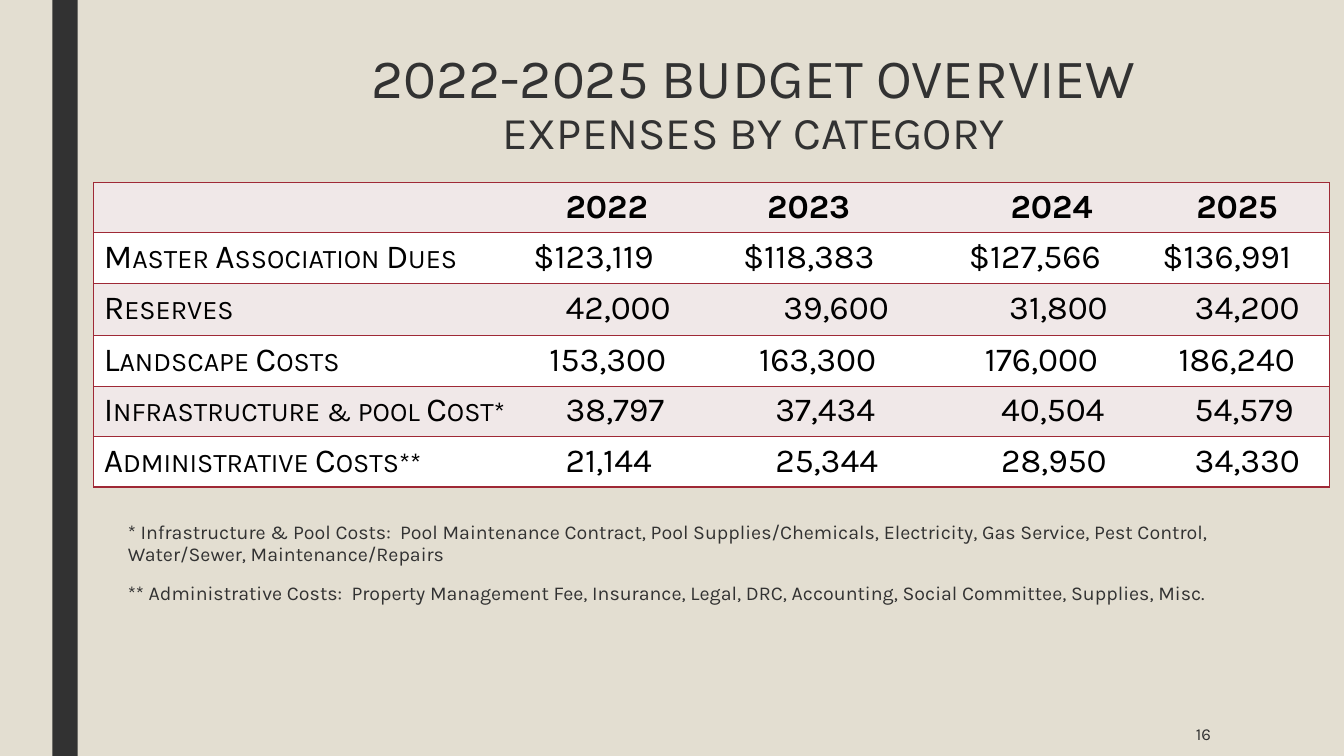
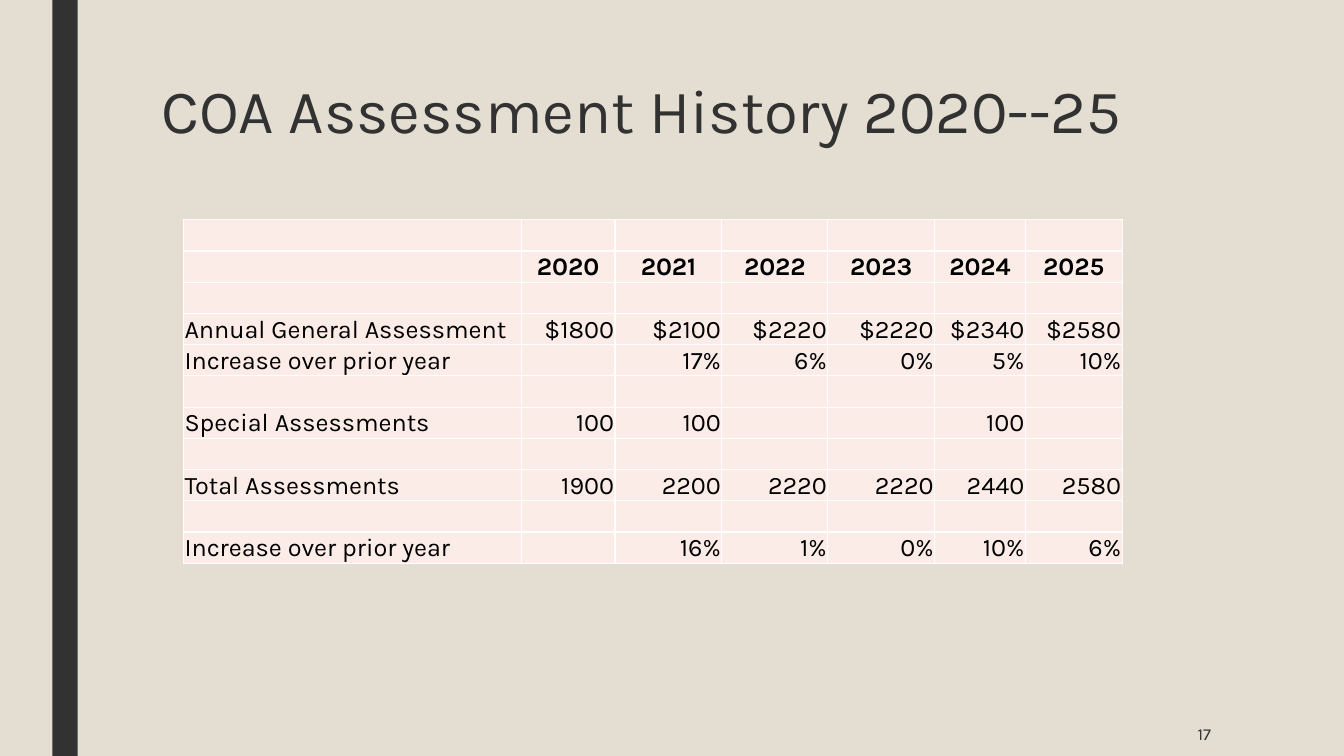
import pptx
import pptx.util
import pptx.dml.color
import pptx.enum.shapes
import pptx.enum.text
import pptx.oxml
import pptx.oxml.ns

Inches, Pt = pptx.util.Inches, pptx.util.Pt
ALIGN = pptx.enum.text.PP_ALIGN
ANCHOR = pptx.enum.text.MSO_ANCHOR

FONT = "Karla"
COLORS = {
    "background": "E3DED1", "ink": "323232", "black": "000000", "white": "FFFFFF",
    "budget_line": "9F2936", "budget_tint": "F0E8E8", "history_fill": "FCECE7",
}
NO_GRID_STYLE = "{2D5ABB26-0587-4C30-8999-92F81FD0307C}"

# Content: expenses by category
BUDGET_TITLE = [("2022-2025 BUDGET OVERVIEW", 39.6), ("EXPENSES BY CATEGORY", 32.4)]
BUDGET_ROWS = [
    ("", "2022", "2023", "2024", "2025"),
    ("Master Association Dues", "$123,119", "$118,383", "$127,566", "$136,991"),
    ("Reserves", "42,000", "39,600", "31,800", "34,200"),
    ("Landscape Costs", "153,300", "163,300", "176,000", "186,240"),
    ("Infrastructure & pool Cost*", "38,797", "37,434", "40,504", "54,579"),
    ("Administrative Costs**", "21,144", "25,344", "28,950", "34,330"),
]
BUDGET_COLUMNS = [4.26, 2.08, 2.24, 1.84, 1.84]
BUDGET_HEIGHTS = [0.5, 0.5, 0.52, 0.5, 0.5, 0.5]
INDENT_STEP = 0.08
YEAR_STEPS = {"2022": 4, "2023": 3}          # the later years are centred
EXTRA_STEPS = {"39,600": 1, "31,800": 1}
FOOTNOTES = [
    "* Infrastructure & Pool Costs:  Pool Maintenance Contract, Pool Supplies/Chemicals, "
    "Electricity, Gas Service, Pest Control, Water/Sewer, Maintenance/Repairs",
    "** Administrative Costs:  Property Management Fee, Insurance, Legal, DRC, Accounting, "
    "Social Committee, Supplies, Misc.",
]

# Content: assessment history
HISTORY_TITLE = [("COA Assessment History 2020--25", 44)]
BLANK = ("",) * 7
HISTORY_ROWS = [
    BLANK,
    ("", "2020", "2021", "2022", "2023", "2024", "2025"),
    BLANK,
    ("Annual General Assessment", "$1800", "$2100", "$2220", "$2220", "$2340", "$2580"),
    ("Increase over prior year", "", "17%", "6%", "0%", "5%", "10%"),
    BLANK,
    ("Special Assessments", "100", "100", "", "", "100", ""),
    BLANK,
    ("Total Assessments", "1900", "2200", "2220", "2220", "2440", "2580"),
    BLANK,
    ("Increase over prior year", "", "16%", "1%", "0%", "10%", "6%"),
]
HISTORY_COLUMNS = [3.35, 0.93, 1.06, 1.05, 1.06, 0.9, 0.96]
HISTORY_HEIGHTS = [0.31] * len(HISTORY_ROWS)
HISTORY_YEAR_ROW = 1


# Shared helpers
def rgb(name):
    return pptx.dml.color.RGBColor.from_string(COLORS[name])


def add_run(paragraph, text, size, color="ink", bold=False):
    run = paragraph.add_run()
    run.text = text
    run.font.name, run.font.size, run.font.bold = FONT, Pt(size), bold
    run.font.color.rgb = rgb(color)
    return run


def add_text_box(slide, box):
    frame = slide.shapes.add_textbox(*map(Inches, box)).text_frame
    frame.word_wrap = True
    return frame


def start_slide(prs, title_lines, title_box, title_align, number):
    """Add a slide with background, side band, title and page number."""
    slide = prs.slides.add_slide(prs.slide_layouts[5])
    band = slide.shapes.add_shape(
        pptx.enum.shapes.MSO_SHAPE.RECTANGLE, Inches(0.52), 0, Inches(0.25), prs.slide_height)
    band.shadow.inherit = False
    band.fill.solid()
    band.fill.fore_color.rgb = rgb("ink")
    band.line.fill.background()

    title = slide.shapes.title
    title.left, title.top, title.width, title.height = map(Inches, title_box)
    frame = title.text_frame
    frame.word_wrap = True
    frame.auto_size = pptx.enum.text.MSO_AUTO_SIZE.NONE
    frame.vertical_anchor = ANCHOR.TOP
    paragraph = frame.paragraphs[0]
    paragraph.alignment, paragraph.line_spacing = title_align, 0.89
    for i, (text, size) in enumerate(title_lines):
        if i:
            paragraph.add_line_break()
        add_run(paragraph, text, size)

    frame = add_text_box(slide, (10.36, 7.06, 1.75, 0.44))
    frame.vertical_anchor = ANCHOR.MIDDLE
    frame.paragraphs[0].alignment = ALIGN.RIGHT
    add_run(frame.paragraphs[0], str(number), 12)
    return slide


def add_grid(slide, left, top, columns, heights):
    """Add an unstyled table with the given column widths and row heights."""
    table = slide.shapes.add_table(
        len(heights), len(columns), Inches(left), Inches(top),
        Inches(sum(columns)), Inches(sum(heights))).table
    table.first_row = table.horz_banding = False
    table._tbl.tblPr.find(pptx.oxml.ns.qn("a:tableStyleId")).text = NO_GRID_STYLE
    for column, width in zip(table.columns, columns):
        column.width = Inches(width)
    for row, height in zip(table.rows, heights):
        row.height = Inches(height)
    return table


def style_cell(cell, fill, line, sides):
    """Draw 1 pt borders on the sides (a subset of LRTB, in that order) and fill the cell."""
    properties = cell._tc.get_or_add_tcPr()
    for side in sides:
        properties.append(pptx.oxml.parse_xml(
            f'<a:ln{side} {pptx.oxml.ns.nsdecls("a")} w="{Pt(1)}"><a:solidFill>'
            f'<a:srgbClr val="{COLORS[line]}"/></a:solidFill></a:ln{side}>'))
    cell.fill.solid()
    cell.fill.fore_color.rgb = rgb(fill)


# Slide parts
def fill_budget_cell(cell, text, r, c, last):
    paragraph = cell.text_frame.paragraphs[0]
    run = add_run(paragraph, text, 24, "black", bold=r == 0)
    steps = 0
    if c == 0:
        run.font._element.set("cap", "small")
    elif r:
        # Shorter amounts are indented further
        steps = 2 * (len("$000,000") - len(text)) + (c == last) + EXTRA_STEPS.get(text, 0)
    elif text in YEAR_STEPS:
        steps = YEAR_STEPS[text]
    else:
        paragraph.alignment = ALIGN.CENTER
    cell.margin_left = Inches(0.1 + steps * INDENT_STEP)


def build_budget(prs):
    slide = start_slide(prs, BUDGET_TITLE, (1.62, 0.46, 11.71, 1.41), ALIGN.CENTER, 16)
    table = add_grid(slide, 0.93, 1.81, BUDGET_COLUMNS, BUDGET_HEIGHTS)
    last = len(BUDGET_COLUMNS) - 1
    for r, row in enumerate(BUDGET_ROWS):
        for c, text in enumerate(row):
            cell = table.cell(r, c)
            sides = {0: "LTB", last: "RTB"}.get(c, "TB")
            style_cell(cell, "white" if r % 2 else "budget_tint", "budget_line", sides)
            if text:
                fill_budget_cell(cell, text, r, c, last)

    frame = add_text_box(slide, (1.17, 5.13, 11.23, 1.29))
    for i, note in enumerate(FOOTNOTES):
        paragraph = frame.add_paragraph() if i else frame.paragraphs[0]
        paragraph.line_spacing = 0.94
        paragraph.space_before, paragraph.space_after = Pt(10), Pt(2)
        add_run(paragraph, note, 14)


def build_history(prs):
    slide = start_slide(prs, HISTORY_TITLE, (1.5, 0.75, 10.5, 1.11), ALIGN.LEFT, 17)
    table = add_grid(slide, 1.82, 2.18, HISTORY_COLUMNS, HISTORY_HEIGHTS)
    for r, row in enumerate(HISTORY_ROWS):
        for c, text in enumerate(row):
            cell = table.cell(r, c)
            style_cell(cell, "history_fill", "white", "LRTB")
            cell.margin_left = cell.margin_right = Inches(0.01)
            cell.margin_top = cell.margin_bottom = 0
            cell.vertical_anchor = ANCHOR.BOTTOM
            if not text:
                continue
            is_year = r == HISTORY_YEAR_ROW
            paragraph = cell.text_frame.paragraphs[0]
            paragraph.alignment = (
                ALIGN.CENTER if is_year else ALIGN.RIGHT if c else ALIGN.LEFT)
            add_run(paragraph, text, 18, "black", bold=is_year)


def main():
    prs = pptx.Presentation()
    prs.slide_width, prs.slide_height = Inches(13.33), Inches(7.5)
    background = prs.slide_master.background.fill
    background.solid()
    background.fore_color.rgb = rgb("background")
    build_budget(prs)
    build_history(prs)
    prs.save("out.pptx")


if __name__ == "__main__":
    main()
